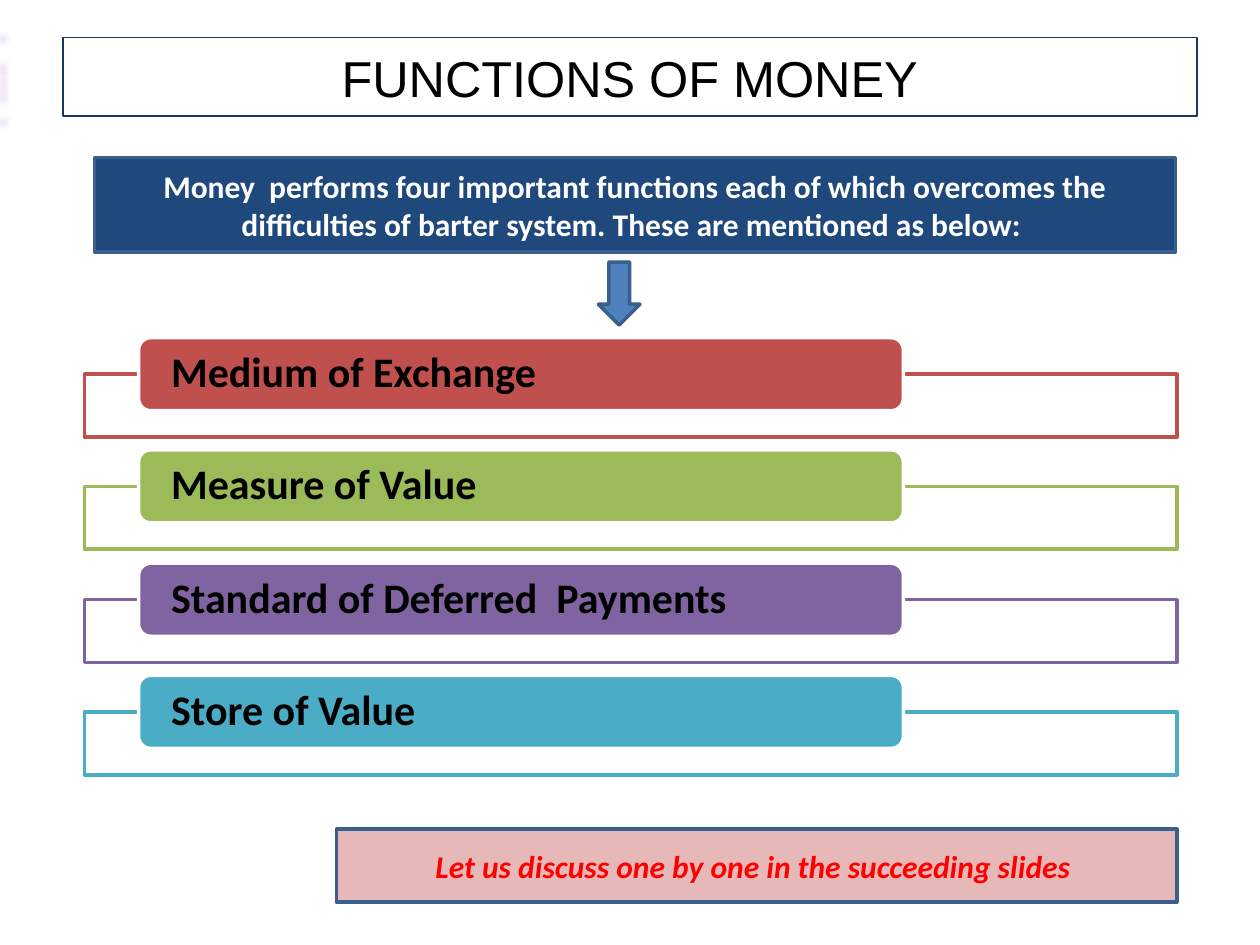
from dataclasses import dataclass

from lxml.etree import SubElement
from pptx import Presentation
from pptx.dml.color import RGBColor
from pptx.enum.shapes import MSO_SHAPE
from pptx.enum.text import MSO_ANCHOR, MSO_AUTO_SIZE, PP_ALIGN
from pptx.oxml.ns import qn
from pptx.util import Emu, Pt

EMU_PER_PX = 9144


@dataclass(frozen=True)
class Theme:
    """Colours, fonts and type sizes of the slide."""
    black: str = "000000"
    white: str = "FFFFFF"
    title_line: str = "17375E"
    title_shadow: str = "7030A0"
    banner: str = "1F497D"
    outline: str = "3A5F8C"
    arrow: str = "4F81BD"
    note: str = "E6B9B8"
    note_text: str = "FF0000"
    accents: tuple = ("C0504D", "9BBB59", "8064A2", "4BACC6")
    title_font: str = "Arial"
    body_font: str = "Calibri"
    title_size: float = 28.8
    label_size: int = 24
    body_size: int = 18
    thin: float = 0.75
    thick: int = 2


THEME = Theme()
FUNCTIONS = (
    "Medium of Exchange",
    "Measure of Value",
    "Standard of Deferred  Payments",
    "Store of Value",
)


def px(length):
    """Turn px into EMU."""
    return Emu(round(length) * EMU_PER_PX)


def apply(target, values):
    """Set each named attribute on the target."""
    for name, value in values.items():
        setattr(target, name, value)


def set_line(shape, color, width):
    """Give the shape a solid outline."""
    shape.line.color.rgb = RGBColor.from_string(color)
    shape.line.width = Pt(width)


def add_box(shapes, kind, box, fill, line):
    """Add a filled and outlined preset shape."""
    shape = shapes.add_shape(kind, *map(px, box))
    shape.shadow.inherit = False
    shape.fill.solid()
    shape.fill.fore_color.rgb = RGBColor.from_string(fill)
    set_line(shape, line, THEME.thick)
    return shape


def write(shape, text, color, font, frame=None, paragraph=None):
    """Put one formatted paragraph into the shape."""
    text_frame = shape.text_frame
    apply(text_frame, {"word_wrap": True, "auto_size": MSO_AUTO_SIZE.NONE,
                       "vertical_anchor": MSO_ANCHOR.MIDDLE, **(frame or {})})
    line = text_frame.paragraphs[0]
    apply(line, {"alignment": PP_ALIGN.CENTER, **(paragraph or {})})
    run = line.add_run()
    run.text = text
    apply(run.font, {"name": THEME.body_font, "size": Pt(THEME.body_size),
                     "bold": True, **font})
    run.font.color.rgb = RGBColor.from_string(color)


def place_title(slide, box):
    """Format the title placeholder with an outline and a left-edge shadow."""
    title = slide.shapes.title
    apply(title, dict(zip(("left", "top", "width", "height"), map(px, box))))
    set_line(title, THEME.title_line, THEME.thin)
    title.shadow.inherit = False
    effects = title.element.spPr.find(qn("a:effectLst"))
    shadow = SubElement(effects, qn("a:outerShdw"), blurRad="50800", sx="500",
                        sy="105000", algn="l", rotWithShape="0")
    SubElement(shadow, qn("a:srgbClr"), val=THEME.title_shadow)
    write(title, "FUNCTIONS OF MONEY", THEME.black,
          {"name": THEME.title_font, "size": Pt(THEME.title_size), "bold": False})


def add_panel(slide, box, text, fill, color, italic=False):
    """Add a rectangle with a centred statement."""
    panel = add_box(slide.shapes, MSO_SHAPE.RECTANGLE, box, fill, THEME.outline)
    write(panel, text, color, {"italic": italic})


def add_function_row(shapes, box, text, accent):
    """Add an outlined strip with a label tab over its upper edge."""
    left, top, width, height = box
    strip = add_box(shapes, MSO_SHAPE.RECTANGLE,
                    (left, top + 29, width, height - 29), THEME.white, accent)
    color = strip.element.spPr.find(f"{qn('a:solidFill')}/{qn('a:srgbClr')}")
    SubElement(color, qn("a:alpha"), val="90000")
    label = add_box(shapes, MSO_SHAPE.ROUNDED_RECTANGLE,
                    (left + 43, top, width * 0.7, 58), accent, THEME.white)
    write(label, text, THEME.black, {"size": Pt(THEME.label_size)},
          {"margin_left": px(23), "margin_right": px(23),
           "margin_top": 0, "margin_bottom": 0},
          {"alignment": PP_ALIGN.LEFT, "line_spacing": 0.9})


def add_function_list(slide, box):
    """Add the evenly spaced rows of functions as one group."""
    left, top, width, height = box
    row_height = 79
    pitch = (height - row_height) / (len(FUNCTIONS) - 1)
    group = slide.shapes.add_group_shape()
    for index, (text, accent) in enumerate(zip(FUNCTIONS, THEME.accents)):
        add_function_row(group.shapes, (left, top + index * pitch, width, row_height),
                         text, accent)


def main():
    """Build and save the slide."""
    presentation = Presentation()
    presentation.slide_width, presentation.slide_height = px(1000), px(750)
    slide = presentation.slides.add_slide(presentation.slide_layouts[5])
    place_title(slide, (50, 30, 900, 62))
    add_function_list(slide, (67, 268, 867, 347))
    add_panel(slide, (75, 125, 858, 75),
              "Money  performs four important functions each of which overcomes the "
              "difficulties of barter system. These are mentioned as below: ",
              THEME.banner, THEME.white)
    add_box(slide.shapes, MSO_SHAPE.DOWN_ARROW, (475, 208, 33, 50),
            THEME.arrow, THEME.outline)
    add_panel(slide, (267, 658, 667, 58),
              "Let us discuss one by one in the succeeding slides ",
              THEME.note, THEME.note_text, italic=True)
    presentation.save("out.pptx")


if __name__ == "__main__":
    main()
